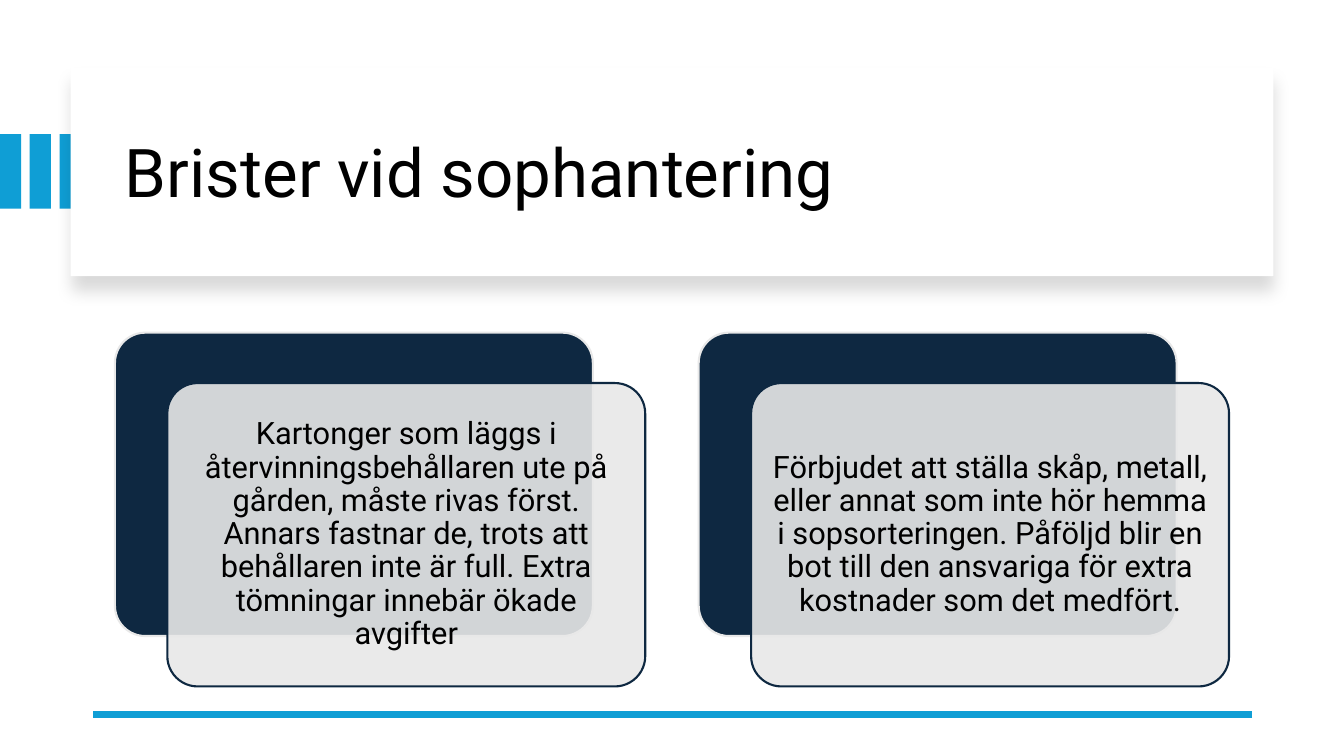
from dataclasses import dataclass

from lxml.etree import SubElement
from pptx import Presentation
from pptx.dml.color import RGBColor
from pptx.enum.shapes import MSO_CONNECTOR, MSO_SHAPE
from pptx.enum.text import MSO_ANCHOR, PP_ALIGN
from pptx.oxml.ns import qn
from pptx.shapes.autoshape import Shape
from pptx.slide import Slide
from pptx.util import Inches, Pt


@dataclass(frozen=True)
class Theme:
    font: str = "Roboto"
    accent: str = "0F9ED5"
    navy: str = "0E2841"
    grey: str = "E8E8E8"
    white: str = "FFFFFF"
    black: str = "000000"
    title_size: int = 48
    body_size: int = 22
    outline: float = 1.5
    rule: float = 4.5


@dataclass(frozen=True)
class Area:
    left: float
    top: float
    width: float
    height: float

    def moved(self, right: float, down: float) -> "Area":
        return Area(self.left + right, self.top + down, self.width, self.height)

    def shrunk(self, margin: float) -> "Area":
        return Area(self.left + margin, self.top + margin,
                    self.width - 2 * margin, self.height - 2 * margin)

    def lengths(self) -> list[int]:
        return [Inches(n) for n in (self.left, self.top, self.width, self.height)]


@dataclass(frozen=True)
class Card:
    area: Area
    text: str


THEME = Theme()
STRIPES = [Area(0.295 * i, 1.33, 0.21, 0.74) for i in range(3)]
TITLE_PANEL = Area(0.7, 0.67, 11.93, 2.07)
TITLE_AREA = Area(1.14, 0.89, 11.13, 1.7)
FIRST_CARD = Area(1.14, 3.3, 4.74, 3.01)
CARD_PITCH = 5.79
CARD_TEXTS = (
    "Kartonger som läggs i återvinningsbehållaren ute på gården, måste rivas först. "
    "Annars fastnar de, trots att behållaren inte är full. "
    "Extra tömningar innebär ökade avgifter",
    "Förbjudet att ställa skåp, metall, eller annat som inte hör hemma i sopsorteringen. "
    "Påföljd blir en bot till den ansvariga för extra kostnader som det medfört.",
)
CARDS = [Card(FIRST_CARD.moved(CARD_PITCH * i, 0), text)
         for i, text in enumerate(CARD_TEXTS)]


def add_panel(page: Slide, kind: MSO_SHAPE, area: Area, fill: str,
              outline: str | None = None) -> Shape:
    panel = page.shapes.add_shape(kind, *area.lengths())
    panel.shadow.inherit = False
    panel.fill.solid()
    panel.fill.fore_color.rgb = RGBColor.from_string(fill)
    if outline:
        panel.line.color.rgb = RGBColor.from_string(outline)
        panel.line.width = Pt(THEME.outline)
    else:
        panel.line.fill.background()
    return panel


def add_rounded(page: Slide, area: Area, fill: str, outline: str) -> Shape:
    panel = add_panel(page, MSO_SHAPE.ROUNDED_RECTANGLE, area, fill, outline)
    panel.adjustments[0] = 0.1
    return panel


def set_opacity(panel: Shape, percent: int) -> None:
    color = panel.fill._xPr.find(qn("a:solidFill"))[0]
    SubElement(color, qn("a:alpha"), val=str(percent * 1000))


def add_drop_shadow(panel: Shape) -> None:
    """Replace the empty effect list with a soft shadow that falls downwards."""
    effects = panel._element.spPr.find(qn("a:effectLst"))
    shadow = SubElement(effects, qn("a:outerShdw"), blurRad=str(Pt(11)),
                        dist=str(Pt(10)), dir="5400000", algn="t", rotWithShape="0")
    color = SubElement(shadow, qn("a:srgbClr"), val=THEME.black)
    SubElement(color, qn("a:alpha"), val="15000")


def add_text(page: Slide, area: Area, text: str, size: int,
             alignment: PP_ALIGN, margins: dict[str, int]) -> None:
    frame = page.shapes.add_textbox(*area.lengths()).text_frame
    frame_format = {"word_wrap": True, "vertical_anchor": MSO_ANCHOR.MIDDLE, **margins}
    for name, value in frame_format.items():
        setattr(frame, name, value)
    para = frame.paragraphs[0]
    para.alignment = alignment
    para.line_spacing = 0.9
    span = para.add_run()
    span.text = text
    for name, value in {"name": THEME.font, "size": Pt(size)}.items():
        setattr(span.font, name, value)
    span.font.color.rgb = RGBColor.from_string(THEME.black)


def add_header(page: Slide) -> None:
    for stripe in STRIPES:
        add_panel(page, MSO_SHAPE.RECTANGLE, stripe, THEME.accent)
    add_drop_shadow(add_panel(page, MSO_SHAPE.RECTANGLE, TITLE_PANEL, THEME.white))
    add_text(page, TITLE_AREA, "Brister vid sophantering", THEME.title_size,
             PP_ALIGN.LEFT, {})


def add_bottom_rule(page: Slide) -> None:
    rule = page.shapes.add_connector(
        MSO_CONNECTOR.STRAIGHT, Inches(12.42), Inches(7.09), Inches(0.92), Inches(7.09))
    rule.line.color.rgb = RGBColor.from_string(THEME.accent)
    rule.line.width = Pt(THEME.rule)
    SubElement(rule._element.spPr, qn("a:effectLst"))


def add_card(page: Slide, card: Card) -> None:
    """Draw a dark back plate, a translucent front plate and the card's text."""
    front_area = card.area.moved(0.52, 0.5)
    add_rounded(page, card.area, THEME.navy, THEME.grey)
    set_opacity(add_rounded(page, front_area, THEME.grey, THEME.navy), 90)
    margins = {f"margin_{side}": Inches(0.09)
               for side in ("left", "top", "right", "bottom")}
    add_text(page, front_area.shrunk(0.09), card.text, THEME.body_size,
             PP_ALIGN.CENTER, margins)


def main() -> None:
    deck = Presentation()
    deck.slide_width, deck.slide_height = Inches(13.33), Inches(7.5)
    page = deck.slides.add_slide(deck.slide_layouts[6])
    add_header(page)
    add_bottom_rule(page)
    for card in CARDS:
        add_card(page, card)
    deck.save("out.pptx")


if __name__ == "__main__":
    main()
